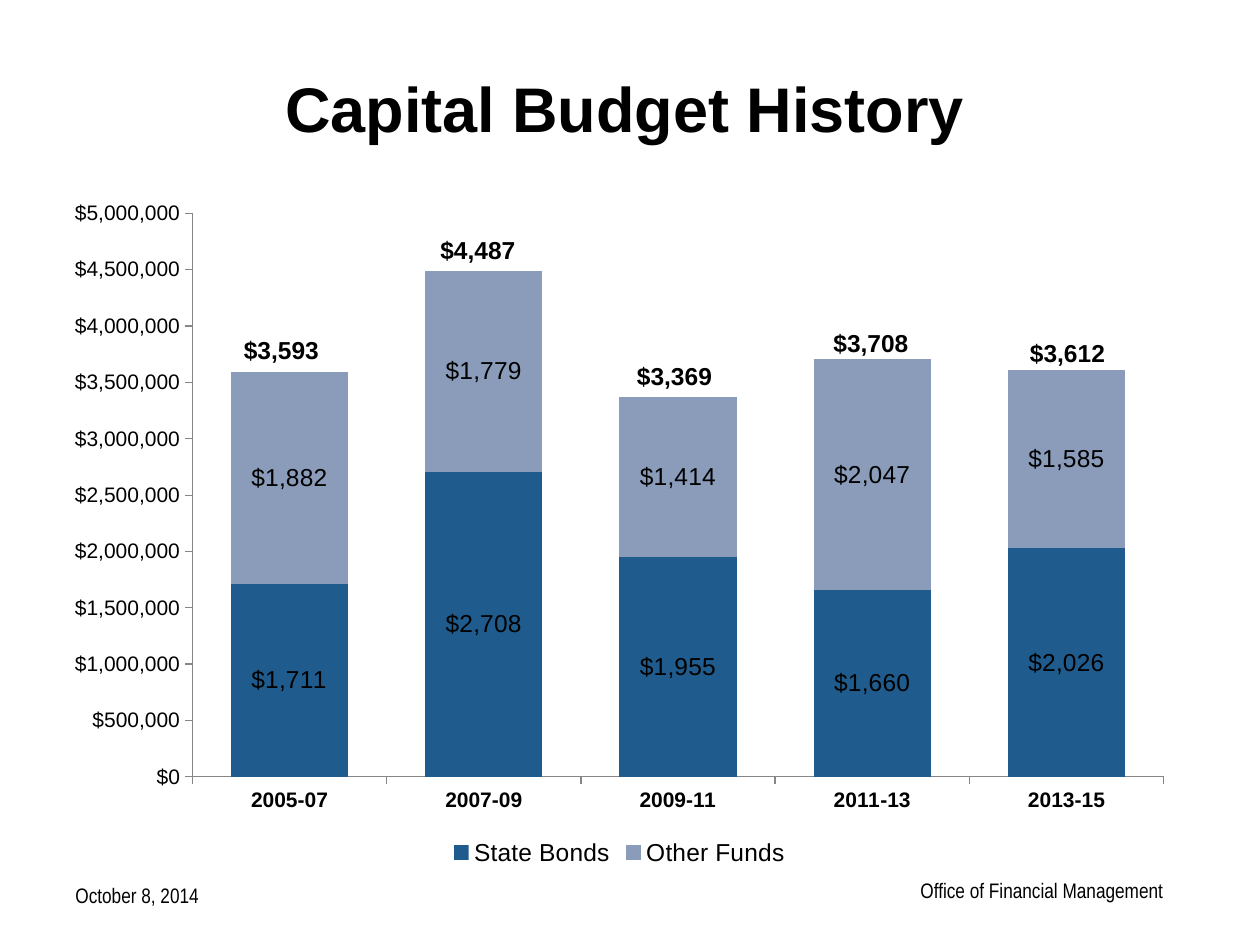
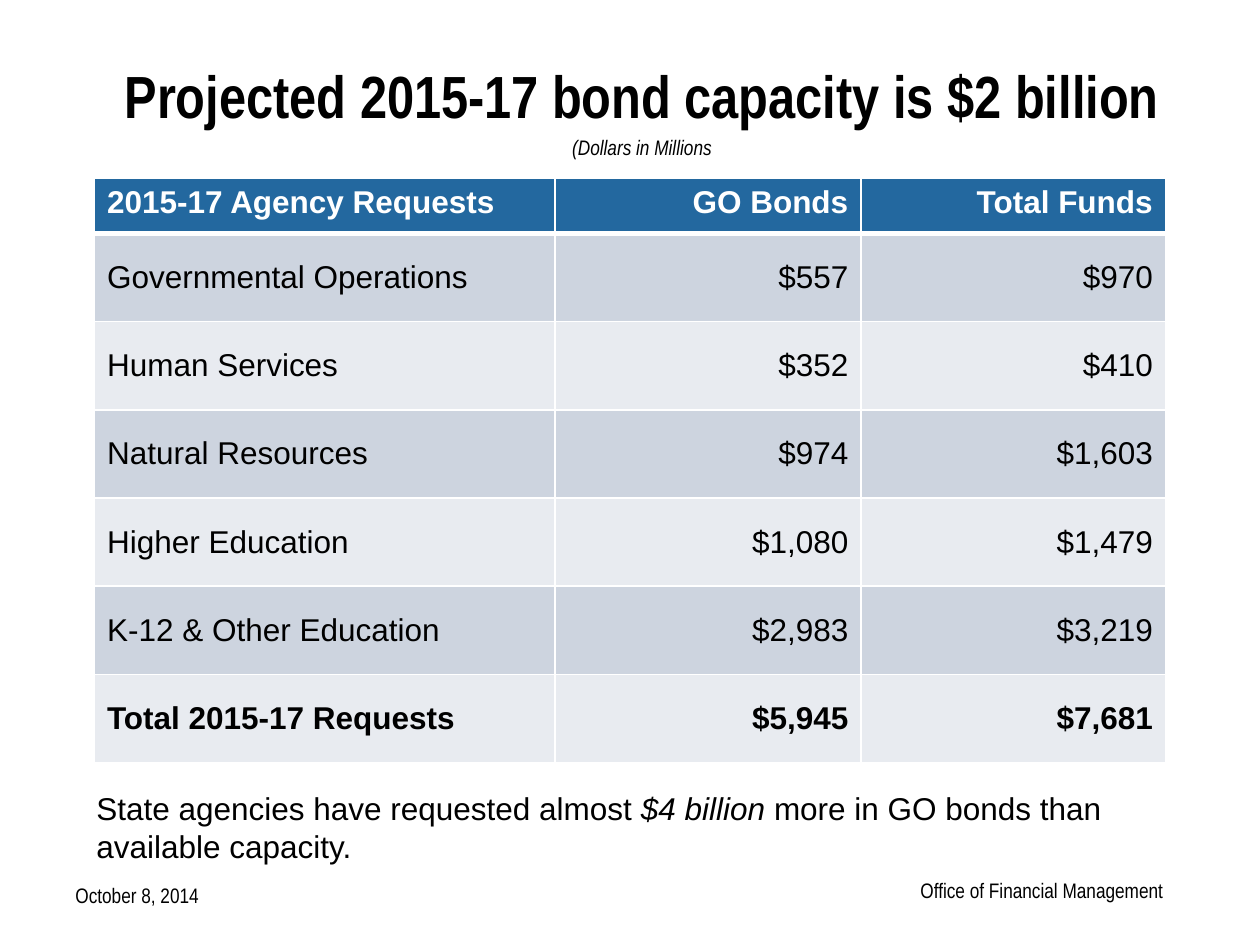
from pptx import Presentation
from pptx.chart.data import CategoryChartData
from pptx.dml.color import RGBColor
from pptx.enum.chart import XL_CHART_TYPE as Kind, XL_LABEL_POSITION as Spot
from pptx.enum.chart import XL_LEGEND_POSITION as Side, XL_TICK_MARK as Tick
from pptx.enum.shapes import MSO_SHAPE as Shape
from pptx.enum.text import MSO_ANCHOR as Anchor, PP_ALIGN as Align
from pptx.oxml import parse_xml
from pptx.oxml.ns import nsdecls
from pptx.util import Pt

BLACK = RGBColor(0x00, 0x00, 0x00)
WHITE = RGBColor(0xFF, 0xFF, 0xFF)
GREY = RGBColor(0x86, 0x86, 0x86)
HEAD = RGBColor(0x23, 0x68, 0x9F)
BANDS = [RGBColor(0xE8, 0xEB, 0xF0), RGBColor(0xCD, 0xD4, 0xDF)]
BOND = RGBColor(0x1F, 0x5C, 0x8D)
OTHER = RGBColor(0x8A, 0x9C, 0xBA)
SANS, NARROW = "Arial", "Arial Narrow"


def add_run(para, text, size, face=SANS, color=BLACK, bold=False, italic=False):
    run = para.add_run()
    run.text = text
    font = run.font
    font.size, font.name, font.bold, font.italic = Pt(size), face, bold, italic
    font.color.rgb = color


def add_box(slide, left, top, width, height, align=Align.LEFT, fill=None):
    """Add wrapping text, on a plain rectangle if filled; return frame and paragraph."""
    place = [Pt(n) for n in (left, top, width, height)]
    if fill is None:
        box = slide.shapes.add_textbox(*place)
    else:
        box = slide.shapes.add_shape(Shape.RECTANGLE, *place)
        box.shadow.inherit = False
        box.fill.solid()
        box.fill.fore_color.rgb = fill
        box.line.fill.background()
    frame = box.text_frame
    frame.word_wrap = True
    frame.vertical_anchor = Anchor.TOP
    para = frame.paragraphs[0]
    para.alignment = align
    return frame, para


deck = Presentation()
deck.slide_width, deck.slide_height = Pt(720), Pt(540)
past, plan = [deck.slides.add_slide(deck.slide_layouts[6]) for _ in range(2)]

# Footers on both slides
for slide in (past, plan):
    _, para = add_box(slide, 36, 500.5, 168, 29)
    add_run(para, "October 8, 2014", 12, NARROW)
    _, para = add_box(slide, 503.8, 498, 168, 29, Align.RIGHT)
    add_run(para, "Office of Financial Management", 12, NARROW)

# Slide 1: stacked budget chart
_, para = add_box(past, 30, 36, 654, 51, Align.CENTER)
add_run(para, "Capital Budget History", 36, bold=True)

data = CategoryChartData(number_format='"$"#,##0')
data.categories = ["2005-07", "2007-09", "2009-11", "2011-13", "2013-15"]
data.add_series("State Bonds", [1711000, 2708000, 1955000, 1660000, 2026000])
data.add_series("Other Funds", [1882000, 1779000, 1414000, 2047000, 1585000])
wide, high = 648, 390
chart = past.shapes.add_chart(
    Kind.COLUMN_STACKED, Pt(30), Pt(108), Pt(wide), Pt(high), data).chart
chart.has_title = False
chart.font.size, chart.font.name = Pt(10), SANS
chart.font.color.rgb = BLACK
chart.has_legend = True
chart.legend.position = Side.BOTTOM
chart.legend.include_in_layout = False
chart.legend.font.size = Pt(14)

plot = chart.plots[0]
plot.gap_width, plot.overlap = 66, 100
plot.vary_by_categories = False
for series, color in zip(plot.series, (BOND, OTHER)):
    series.format.fill.solid()
    series.format.fill.fore_color.rgb = color
    labels = series.data_labels
    labels.show_value = True
    labels.position = Spot.CENTER
    labels.number_format = '"$"#,##0,'  # shown in thousands
    labels.number_format_is_linked = False
    labels.font.size = Pt(14)

years, money = chart.category_axis, chart.value_axis
for axis in (years, money):
    axis.has_major_gridlines = False
    axis.major_tick_mark = Tick.OUTSIDE
    axis.minor_tick_mark = Tick.NONE
    axis.format.line.color.rgb = GREY
    axis.tick_labels.font.size = Pt(12)
years.tick_labels.font.bold = True
money.minimum_scale, money.maximum_scale, money.major_unit = 0, 5000000, 500000
money.tick_labels.number_format = '"$"#,##0'
money.tick_labels.number_format_is_linked = False

area = chart._chartSpace.chart.plotArea
for old in area.findall("{*}layout"):
    area.remove(old)
area.insert(0, parse_xml(
    f'<c:layout {nsdecls("c")}><c:manualLayout><c:layoutTarget val="inner"/>'
    f'<c:xMode val="edge"/><c:yMode val="edge"/>'
    f'<c:x val="{80 / wide}"/><c:y val="{14 / high}"/>'
    f'<c:w val="{555 / wide}"/><c:h val="{322 / high}"/>'
    '</c:manualLayout></c:layout>'))

sums = [("$3,593", 188, None), ("$4,487", 131, None), ("$3,369", 203, WHITE),
        ("$3,708", 183.8, None), ("$3,612", 189.5, None)]
for i, (text, top, fill) in enumerate(sums):
    _, para = add_box(past, 130.8 + 112.3 * i, top, 60, 19.5, Align.CENTER, fill)
    add_run(para, text, 14, bold=True)

# Slide 2: agency requests
frame, para = add_box(plan, 55.8, 30, 618, 70, Align.CENTER)
frame.margin_left = Pt(11.2)
add_run(para, "Projected 2015-17 bond capacity is $2 billion", 34, NARROW, bold=True)
para = frame.add_paragraph()
para.alignment = Align.CENTER
para.space_before = Pt(2.5)
add_run(para, "(Dollars in Millions", 12, NARROW, italic=True)

rows = [
    ("2015-17 Agency Requests", "GO Bonds", "Total Funds"),
    ("Governmental Operations", "$557", "$970"),
    ("Human Services", "$352", "$410"),
    ("Natural Resources", "$974", "$1,603"),
    ("Higher Education", "$1,080", "$1,479"),
    ("K-12 & Other Education", "$2,983", "$3,219"),
    ("Total 2015-17 Requests", "$5,945", "$7,681"),
]
last = len(rows) - 1
table = plan.shapes.add_table(
    len(rows), 3, Pt(54), Pt(102), Pt(612), Pt(333.8)).table
for col, width in zip(table.columns, (263.2, 174.8, 174)):
    col.width = Pt(width)
for r, row in enumerate(rows):
    table.rows[r].height = Pt(50.4 if r else 31.4)
    for c, text in enumerate(row):
        cell = table.cell(r, c)
        cell.vertical_anchor = Anchor.MIDDLE if r else Anchor.TOP
        para = cell.text_frame.paragraphs[0]
        para.alignment = Align.RIGHT if c else Align.LEFT
        add_run(para, text, 18, color=BLACK if r else WHITE, bold=r in (0, last))
        props = cell._tc.get_or_add_tcPr()
        for edge in "LRTB":
            thick = 3 if (r, edge) in ((0, "B"), (1, "T")) else 1
            props.append(parse_xml(
                f'<a:ln{edge} {nsdecls("a")} w="{Pt(thick)}"><a:solidFill>'
                f'<a:srgbClr val="{WHITE}"/></a:solidFill></a:ln{edge}>'))
        cell.fill.solid()
        cell.fill.fore_color.rgb = BANDS[r % 2] if r else HEAD

_, para = add_box(plan, 48, 447.5, 624, 51)
add_run(para, "State agencies have requested almost ", 18)
add_run(para, "$4 billion ", 18, italic=True)
add_run(para, "more in GO bonds than available capacity.", 18)

deck.save("out.pptx")
